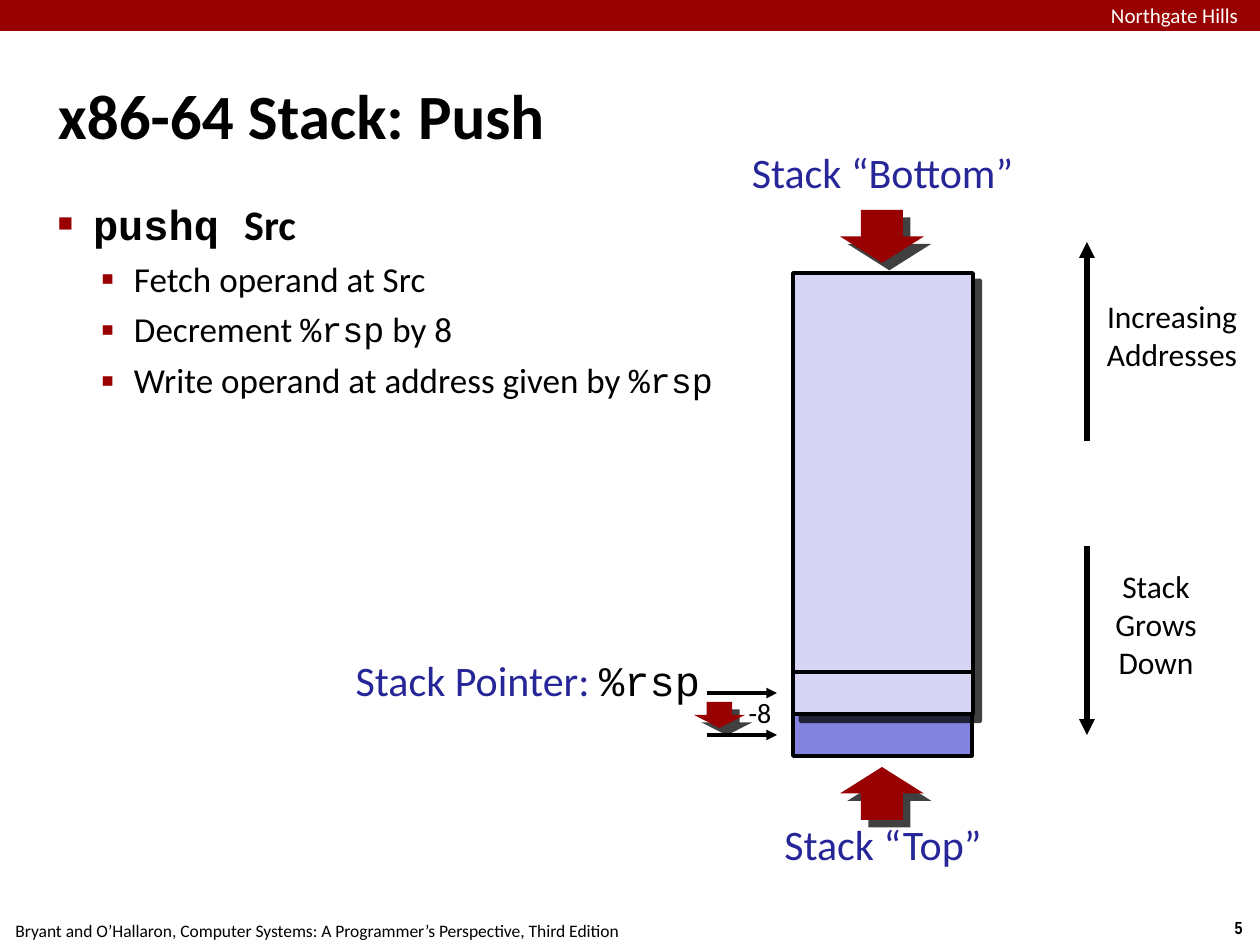
"""Build the slide that explains how push works on the x86-64 stack."""
from lxml.etree import SubElement
from pptx import Presentation
from pptx.dml.color import RGBColor
from pptx.enum.shapes import MSO_CONNECTOR as LINE, MSO_SHAPE as SHAPE
from pptx.enum.text import MSO_ANCHOR as ANCHOR, PP_ALIGN as ALIGN
from pptx.oxml.ns import qn
from pptx.util import Pt

PX = 914400 / 126
SANS, MONO, NARROW = "Calibri", "Courier New", "Arial Narrow"
BLACK, WHITE, RED, ARROW_RED = "000000", "FFFFFF", "990000", "980002"
BLUE, LILAC, VIOLET = "262699", "D6D6F4", "8484E0"
L, C, R = ALIGN.LEFT, ALIGN.CENTER, ALIGN.RIGHT

BANNER = (0, 0, 1261, 31)
PUSHED_CELL = (793, 714, 179, 42)
STACK = (793, 273, 180, 441)
BLOCK_ARROWS = [
    (SHAPE.DOWN_ARROW, (840, 210, 84, 53)),
    (SHAPE.UP_ARROW, (840, 767, 84, 53)),
    (SHAPE.DOWN_ARROW, (694, 702, 51, 26)),
]
# start, end, width in points, arrowhead
LINES = [
    ((707, 693), (777, 693), 2, True),
    ((707, 735), (777, 735), 2, True),
    ((793, 672), (972, 672), 2, False),
    ((1087, 546), (1087, 735), 3, True),
    ((1087, 441), (1087, 242), 3, True),
]
# box, inset, wrap, alignment, size, colour, fill, paragraphs
LABELS = [
    ((1111, 3, 181, 24), 0, True, L, 12, WHITE, None, ["Northgate Hills"]),
    ((1100, 567, 112, 126), 0, True, C, 18, BLACK, WHITE, ["Stack Grows", "Down"]),
    ((1101, 297, 142, 87), 0, False, C, 18, BLACK, WHITE, ["Increasing", "Addresses"]),
    ((742, 147, 281, 62), 0, False, C, 24, BLUE, None, ["Stack “Bottom”"]),
    ((776, 819, 214, 62), 0, False, C, 24, BLUE, None, ["Stack “Top”"]),
    ((743, 690, 34, 44), 5, False, C, 16, BLACK, None, ["-8"]),
    ((-3, 914, 640, 34), 6, False, C, 10, BLACK, None,
     ["Bryant and O’Hallaron, Computer Systems: A Programmer’s Perspective, Third Edition"]),
]
BULLETS = [
    (0, [("pushq ", MONO), ("Src", SANS)]),
    (1, [("Fetch operand at Src", SANS)]),
    (1, [("Decrement ", SANS), ("%rsp", MONO), (" by 8", SANS)]),
    (1, [("Write operand at address given by ", SANS), ("%rsp", MONO)]),
]
# size, bold, space before, margin, hang, bullet, bullet size in percent
LEVELS = [(24, True, 6, 35, 35, "■", 60), (20, False, 5, 76, 33, "▪", 110)]


def px(*values):
    return [round(v * PX) for v in values]


def rgb(value):
    return RGBColor.from_string(value)


def add_run(p, text, size, colour, font=SANS, bold=False):
    r = p.add_run()
    r.text = text
    r.font.size, r.font.name, r.font.bold = Pt(size), font, bold
    r.font.color.rgb = rgb(colour)


def add_text(s, box, inset=0, wrap=True, fill=None):
    sp = s.shapes.add_textbox(*px(*box))
    if fill:
        sp.fill.solid()
        sp.fill.fore_color.rgb = rgb(fill)
    tf = sp.text_frame
    tf.word_wrap = wrap
    tf.margin_left = tf.margin_right = tf.margin_top = tf.margin_bottom = px(inset)[0]
    return tf


def add_block(s, kind, box, fill, outline=False, shadow=False):
    sp = s.shapes.add_shape(kind, *px(*box))
    sp.shadow.inherit = False
    sp.fill.solid()
    sp.fill.fore_color.rgb = rgb(fill)
    if outline:
        sp.line.color.rgb, sp.line.width = rgb(BLACK), Pt(2)
    else:
        sp.line.fill.background()
    if shadow:
        effects = sp._element.spPr.find(qn("a:effectLst"))
        outer = SubElement(effects, qn("a:outerShdw"), blurRad="0", dist=str(Pt(6)),
                           dir="2700000", algn="ctr", rotWithShape="0")
        colour = SubElement(outer, qn("a:srgbClr"), val=BLACK)
        SubElement(colour, qn("a:alpha"), val="75000")


def add_line(s, start, end, width, head):
    line = s.shapes.add_connector(LINE.STRAIGHT, *px(*start, *end))
    line.line.color.rgb, line.line.width = rgb(BLACK), Pt(width)
    if head:
        SubElement(line.line._get_or_add_ln(), qn("a:tailEnd"), type="triangle")
    SubElement(line._element.spPr, qn("a:effectLst"))


def add_bullet(p, level, runs):
    size, bold, before, margin, hang, char, percent = LEVELS[level]
    p.level, p.space_before = level, Pt(before)
    pPr = p._p.get_or_add_pPr()
    pPr.set("marL", str(px(margin)[0]))
    pPr.set("indent", str(px(-hang)[0]))
    SubElement(SubElement(pPr, qn("a:buClr")), qn("a:srgbClr"), val=RED)
    SubElement(pPr, qn("a:buSzPct"), val=str(percent * 1000))
    SubElement(pPr, qn("a:buFont"), typeface="Arial")
    SubElement(pPr, qn("a:buChar"), char=char)
    for text, font in runs:
        add_run(p, text, size, BLACK, font, bold)


def main():
    prs = Presentation()
    prs.slide_width, prs.slide_height = px(1260, 945)
    s = prs.slides.add_slide(prs.slide_layouts[6])

    add_block(s, SHAPE.RECTANGLE, BANNER, RED)
    tf = add_text(s, (53, 35, 1155, 158), 5)
    tf.vertical_anchor = ANCHOR.MIDDLE
    add_run(tf.paragraphs[0], "x86-64 Stack: Push", 36, BLACK, bold=True)

    tf = add_text(s, (53, 193, 1155, 748), 5)
    for i, (level, runs) in enumerate(BULLETS):
        add_bullet(tf.add_paragraph() if i else tf.paragraphs[0], level, runs)

    add_block(s, SHAPE.RECTANGLE, PUSHED_CELL, VIOLET, outline=True)
    add_block(s, SHAPE.RECTANGLE, STACK, LILAC, outline=True, shadow=True)
    for kind, box in BLOCK_ARROWS:
        add_block(s, kind, box, ARROW_RED, shadow=True)
    for line in LINES:
        add_line(s, *line)

    for box, inset, wrap, align, size, colour, fill, texts in LABELS:
        tf = add_text(s, box, inset, wrap, fill)
        for i, text in enumerate(texts):
            p = tf.add_paragraph() if i else tf.paragraphs[0]
            p.alignment = align
            add_run(p, text, size, colour)

    p = add_text(s, (350, 655, 350, 50), wrap=False).paragraphs[0]
    p.alignment = R
    add_run(p, "Stack Pointer: ", 24, BLUE)
    add_run(p, "%rsp", 24, BLACK, MONO)

    p = add_text(s, (1217, 911, 43, 34), 6, False).paragraphs[0]
    p.alignment = C
    add_run(p, "5", 10, BLACK, NARROW, True)

    prs.save("out.pptx")


if __name__ == "__main__":
    main()
